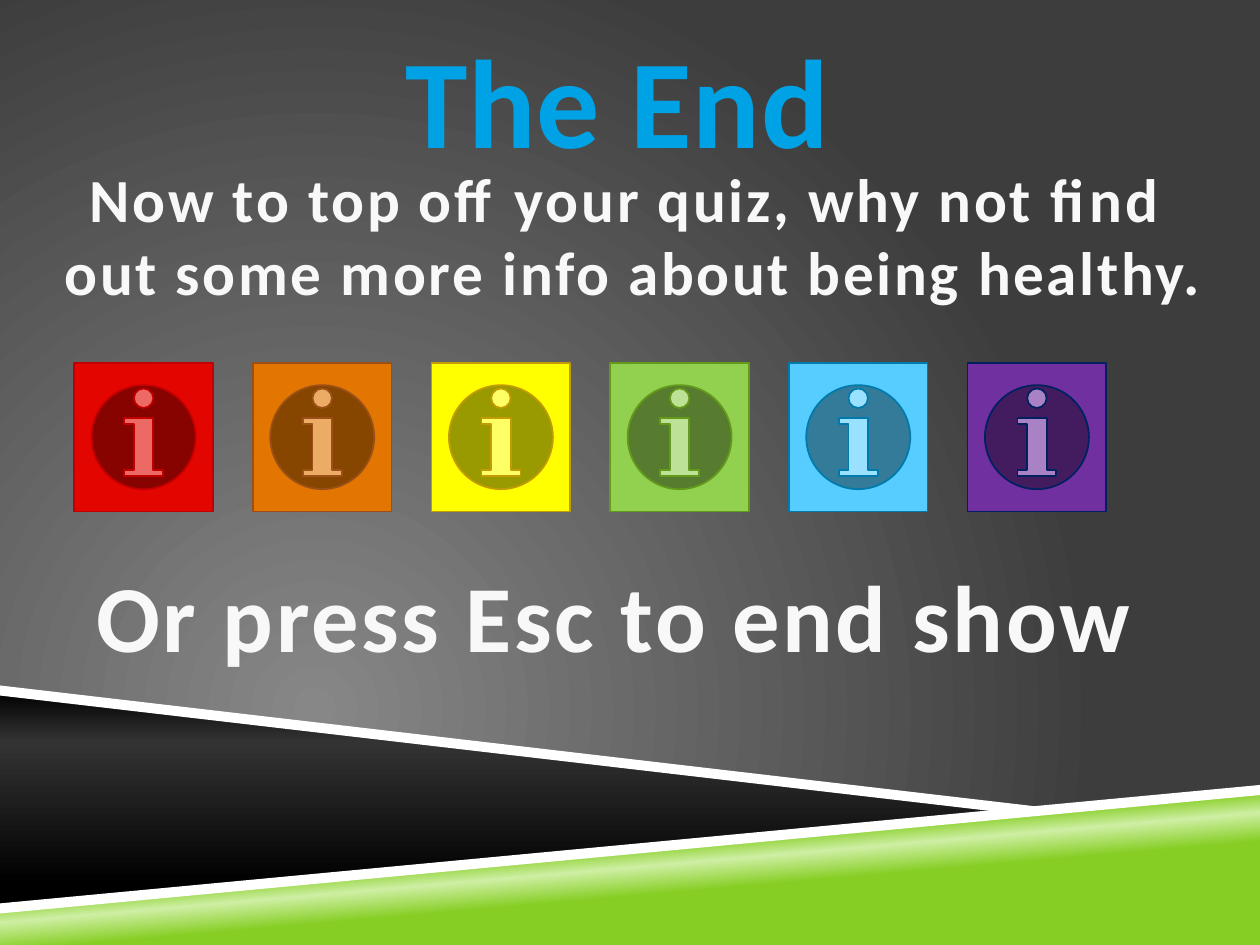
from lxml.etree import SubElement
from pptx import Presentation
from pptx.dml.color import RGBColor
from pptx.enum.shapes import MSO_SHAPE
from pptx.enum.text import MSO_AUTO_SIZE, PP_ALIGN
from pptx.oxml.ns import qn
from pptx.util import Inches, Pt

WIDTH, HEIGHT = 10, 7.5
WHITE, TEXT_COLOR = "FFFFFF", "F8F8F8"

BACKDROP = [(0, "878787"), (100, "3D3D3D")]
BLACK_SHEEN = [(0, "000000"), (24, "333333"), (90, "000000")]
GREEN_SHEEN = [(39, "86CE24"), (50, "CFEFA4"), (58, "86CE24")]
TITLE_BLUE = [(25, "00A2E6"), (100, "0072A3")]

# corner points, then a plain colour or (stops, angle)
BANDS = [
    ([(0, 5.48), (8.14, 6.43), (0, 7.2)], (BLACK_SHEEN, 90)),
    ([(0, 7.21), (WIDTH, 6.27), (WIDTH, HEIGHT), (0, HEIGHT)], (GREEN_SHEEN, 265)),
    ([(0, 5.44), (0, 5.52), (7.98, 6.45), (8.39, 6.42)], WHITE),
    ([(WIDTH, 6.23), (0, 7.17), (0, 7.25), (WIDTH, 6.31)], WHITE),
]

# box, lines, size, letter spacing, fill
TEXTS = [
    ((2.79, 0.13, 4.22, 1.31), ["The End"], 72, 0.5, (TITLE_BLUE, 90)),
    ((-0.25, 1.23, 10.55, 1.31),
     ["Now to top off your quiz, why not find ",
      "out some more info about being healthy."], 35, 1.5, TEXT_COLOR),
    ((0.07, 4.38, 9.61, 1.01), ["Or press Esc to end show"], 54, 1.5, TEXT_COLOR),
]

# fill and outline, left to right
BUTTONS = [
    ("E20500", "C00000"), ("E27600", "9C5018"), ("FFFF00", "C39B04"),
    ("92D050", "649A1B"), ("57CDFF", "007AAC"), ("7030A0", "002060"),
]
BUTTON_LEFT, BUTTON_TOP, BUTTON_PITCH = 0.59, 2.88, 1.418
BUTTON_WIDTH, BUTTON_HEIGHT = 1.1, 1.18


def color(hex_string):
    return RGBColor.from_string(hex_string)


def set_gradient(fill, properties, stops, angle=None):
    """Fill with stops, linear at an angle or else circular from the lower left."""
    fill.gradient()
    gradient = properties.find(qn("a:gradFill"))
    for child in list(gradient):
        gradient.remove(child)
    stop_list = SubElement(gradient, qn("a:gsLst"))
    for position, hex_string in stops:
        stop = SubElement(stop_list, qn("a:gs"), pos=str(position * 1000))
        SubElement(stop, qn("a:srgbClr"), val=hex_string)
    if angle is None:
        path = SubElement(gradient, qn("a:path"), path="circle")
        SubElement(path, qn("a:fillToRect"), l="50000", t="100000", r="100000", b="50000")
    else:
        SubElement(gradient, qn("a:lin"), ang=str(angle * 60000), scaled="0")


def set_fill(fill, properties, paint):
    if isinstance(paint, str):
        fill.solid()
        fill.fore_color.rgb = color(paint)
    else:
        set_gradient(fill, properties, *paint)


def add_band(slide, points, paint):
    corners = [(Inches(x), Inches(y)) for x, y in points]
    builder = slide.shapes.build_freeform(*corners[0])
    builder.add_line_segments(corners[1:], close=True)
    band = builder.convert_to_shape()
    band.shadow.inherit = False
    band.line.fill.background()
    set_fill(band.fill, band._element.spPr, paint)


def add_text(slide, box, lines, size, spacing, paint):
    frame = slide.shapes.add_textbox(*map(Inches, box)).text_frame
    frame.word_wrap = False
    frame.auto_size = MSO_AUTO_SIZE.SHAPE_TO_FIT_TEXT
    frame.text = "\n".join(lines)
    for paragraph in frame.paragraphs:
        paragraph.alignment = PP_ALIGN.CENTER
        font = paragraph.font
        font.name, font.size, font.bold = "Calibri", Pt(size), True
        font._rPr.set("spc", str(int(spacing * 100)))
        set_fill(font.fill, font._rPr, paint)


def add_button(slide, column, fill, outline):
    left = BUTTON_LEFT + column * BUTTON_PITCH
    button = slide.shapes.add_shape(
        MSO_SHAPE.ACTION_BUTTON_INFORMATION,
        *map(Inches, (left, BUTTON_TOP, BUTTON_WIDTH, BUTTON_HEIGHT)))
    button.shadow.inherit = False
    button.fill.solid()
    button.fill.fore_color.rgb = color(fill)
    button.line.color.rgb = color(outline)
    button.line.width = Pt(1)


def main():
    presentation = Presentation()
    presentation.slide_width, presentation.slide_height = Inches(WIDTH), Inches(HEIGHT)
    slide = presentation.slides.add_slide(presentation.slide_layouts[6])
    background = slide.background.fill
    set_gradient(background, slide._element.cSld.bg.bgPr, BACKDROP)
    for band in BANDS:
        add_band(slide, *band)
    for text in TEXTS:
        add_text(slide, *text)
    for column, colors in enumerate(BUTTONS):
        add_button(slide, column, *colors)
    presentation.save("out.pptx")


if __name__ == "__main__":
    main()
